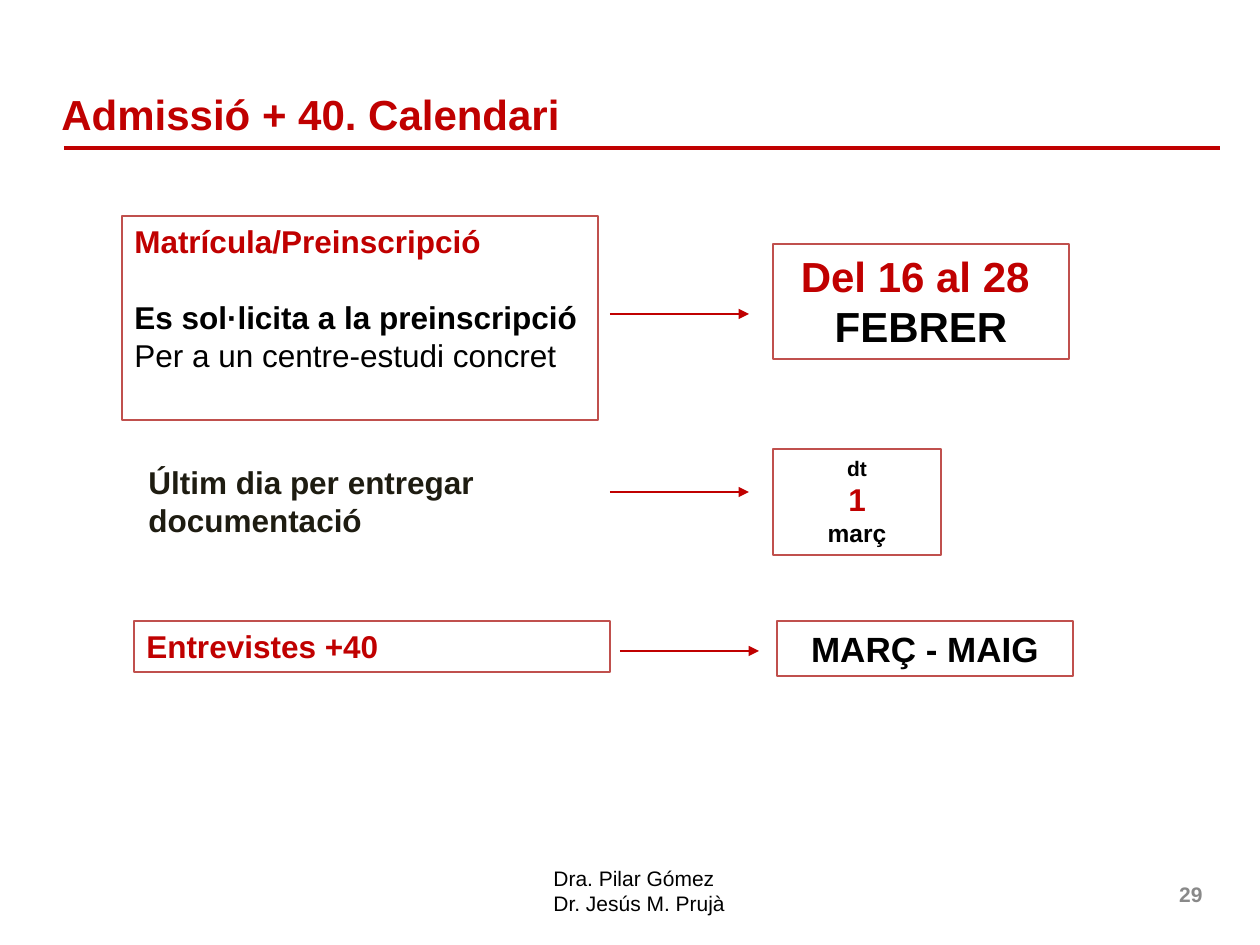
"""Build the admission calendar slide for applicants over 40."""
from lxml.etree import SubElement
from pptx import Presentation
from pptx.dml.color import RGBColor
from pptx.enum.shapes import MSO_CONNECTOR, MSO_SHAPE
from pptx.enum.text import MSO_ANCHOR, PP_ALIGN
from pptx.oxml.ns import qn
from pptx.util import Emu, Pt

COLORS = {
    "red": "C00000",
    "border": "C0504D",
    "black": "000000",
    "dark": "1E1C11",
    "gray": "898989",
    "white": "FFFFFF",
}


def px(length):
    return Emu(round(length * 914400 / 126))


def color(name):
    return RGBColor.from_string(COLORS[name])


class CalendarPage:
    font = "Arial"

    def __init__(self, deck):
        self.page = deck.slides.add_slide(deck.slide_layouts[6])

    def set_lines(self, shape, lines, align, anchor):
        frame = shape.text_frame
        frame.word_wrap = True
        frame.vertical_anchor = anchor
        frame.text = "\n".join(line[0] for line in lines)
        for para, (_, size, tint, bold, before) in zip(frame.paragraphs, lines):
            para.alignment = align
            if before:
                para.space_before = Pt(before)
            for span in para.runs:
                span.font.name = self.font
                span.font.size = Pt(size)
                span.font.bold = bold
                span.font.color.rgb = color(tint)

    def text(self, bounds, lines, align=PP_ALIGN.LEFT, anchor=MSO_ANCHOR.TOP):
        box = self.page.shapes.add_textbox(*map(px, bounds))
        self.set_lines(box, lines, align, anchor)

    def box(self, bounds, lines, align=PP_ALIGN.CENTER, fill=None):
        box = self.page.shapes.add_shape(MSO_SHAPE.RECTANGLE, *map(px, bounds))
        box.shadow.inherit = False
        if fill:
            box.fill.solid()
            box.fill.fore_color.rgb = color(fill)
        else:
            box.fill.background()
        box.line.color.rgb = color("border")
        box.line.width = Pt(1.5)
        self.set_lines(box, lines, align, MSO_ANCHOR.TOP)

    def line(self, left, top, width, weight, arrow=False):
        ends = (left, top, left + width, top)
        rule = self.page.shapes.add_connector(MSO_CONNECTOR.STRAIGHT, *map(px, ends))
        rule.line.color.rgb = color("red")
        rule.line.width = Pt(weight)
        properties = rule.element.spPr
        if arrow:
            SubElement(properties.find(qn("a:ln")), qn("a:tailEnd"), type="triangle")
        SubElement(properties, qn("a:effectLst"))


def main():
    deck = Presentation()
    deck.slide_width, deck.slide_height = px(1260), px(945)
    page = CalendarPage(deck)

    page.line(64, 148, 1156, 2.25)
    page.text((541, 859, 198, 64), [
        ("Dra. Pilar Gómez", 12, "black", False, 0),
        ("Dr. Jesús M. Prujà", 12, "black", False, 0),
    ])
    page.text((49, 79, 1181, 69), [("Admissió + 40. Calendari", 24, "red", True, 0)],
              anchor=MSO_ANCHOR.MIDDLE)

    page.text((136, 457, 420, 89), [
        ("Últim dia per entregar documentació", 18, "dark", True, 0),
    ])
    page.box((773, 449, 168, 106), [
        ("dt", 12, "black", True, 0),
        ("1", 18, "red", True, 0),
        ("març", 14, "black", True, 0),
    ])
    page.box((122, 216, 476, 204), [
        ("Matrícula/Preinscripció", 18, "red", True, 0),
        ("Es sol·licita a la preinscripció", 18, "black", True, 21.7),
        ("Per a un centre-estudi concret", 18, "black", False, 0),
    ], PP_ALIGN.LEFT, "white")
    page.box((773, 244, 296, 115), [
        ("Del 16 al 28 ", 24, "red", True, 0),
        ("FEBRER", 24, "black", True, 0),
    ])
    page.box((134, 621, 476, 51), [("Entrevistes +40", 18, "red", True, 0)],
             PP_ALIGN.LEFT, "white")
    page.box((777, 621, 296, 55), [("MARÇ - MAIG", 20, "black", True, 0)])

    for left, top in ((610, 314), (610, 492), (620, 651)):
        page.line(left, top, 139, 1, arrow=True)

    page.text((1155, 869, 60, 50), [("29", 12, "gray", True, 0)],
              PP_ALIGN.RIGHT, MSO_ANCHOR.MIDDLE)
    deck.save("out.pptx")


if __name__ == "__main__":
    main()
